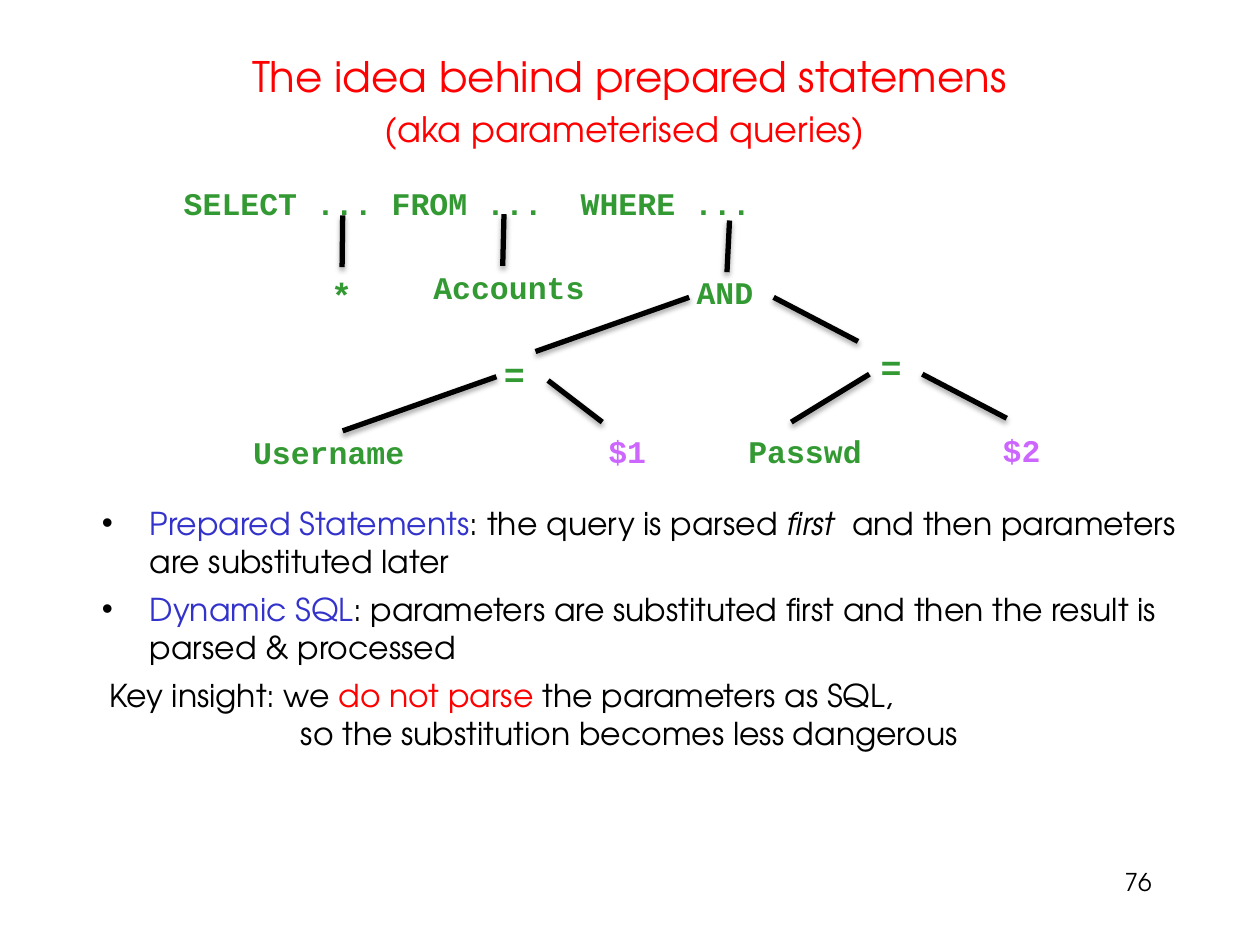
"""Build a slide that explains prepared statements with a query parse tree."""
from lxml.etree import SubElement
from pptx import Presentation
from pptx.dml.color import RGBColor
from pptx.enum.shapes import MSO_CONNECTOR
from pptx.enum.text import MSO_ANCHOR, MSO_AUTO_SIZE, PP_ALIGN
from pptx.oxml.ns import qn
from pptx.util import Inches, Pt

THEME = {
    "heading": "FF0000", "term": "3333CC", "body": "000000",
    "node": "339933", "parameter": "CC66FF",
    "title_size": 24, "subtitle_size": 20, "body_size": 18, "number_size": 14,
    "node_size": 18, "symbol_size": 20, "branch_width": 3,
    "text_font": "TeX Gyre Adventor", "code_font": "Courier New",
}

presentation = Presentation()
presentation.slide_width, presentation.slide_height = Inches(10), Inches(7.5)
slide = presentation.slides.add_slide(presentation.slide_layouts[6])
column = presentation.slide_width / 10
row = presentation.slide_height / 7.5


def add_box(left, top, width, height, **frame_format):
    box = slide.shapes.add_textbox(
        int(left * column), int(top * row), int(width * column), int(height * row))
    for name, value in {"word_wrap": True, **frame_format}.items():
        setattr(box.text_frame, name, value)
    return box


def add_run(paragraph, text, color, size, font="text_font", **font_format):
    run = paragraph.add_run()
    run.text = text
    run.font.color.rgb = RGBColor.from_string(THEME[color])
    values = {"name": THEME[font], "size": Pt(THEME[size]), **font_format}
    for name, value in values.items():
        setattr(run.font, name, value)


title = add_box(0.75, 0.3, 8.49, 0.92, vertical_anchor=MSO_ANCHOR.MIDDLE)
heading = title.text_frame.paragraphs[0]
heading.alignment, heading.line_spacing = PP_ALIGN.CENTER, 1.16
add_run(heading, "The idea behind prepared statemens", "heading", "title_size")
heading.add_line_break()
add_run(heading, "(aka parameterised queries) ", "heading", "subtitle_size")

explanation = [
    ("•", 0.38, 6, [("Prepared Statements", "term"), (": the query is parsed ", "body"),
                    ("first ", "body", True),
                    (" and then parameters are substituted later", "body")]),
    ("•", 0.38, 6, [("Dynamic SQL", "term"),
                    (": parameters are substituted first and then the result is "
                     "parsed & processed", "body")]),
    (None, 0.06, 6, [("Key insight: we", "body"), (" do not parse ", "heading"),
                     ("the parameters as SQL,", "body")]),
    (None, 1.58, 0, [("so the substitution becomes less dangerous", "body")]),
]
body = add_box(0.71, 3.95, 8.94, 2.36)
for index, (bullet, margin, space_before, runs) in enumerate(explanation):
    frame = body.text_frame
    paragraph = frame.add_paragraph() if index else frame.paragraphs[0]
    paragraph.space_before = Pt(space_before)
    properties = paragraph._p.get_or_add_pPr()
    properties.set("marL", str(Inches(margin)))
    properties.set("indent", str(-Inches(margin) if bullet else 0))
    if bullet:
        bullet_color = SubElement(properties, qn("a:buClr"))
        SubElement(bullet_color, qn("a:srgbClr"), val=THEME["body"])
        SubElement(properties, qn("a:buFont"), typeface="Arial")
        SubElement(properties, qn("a:buChar"), char=bullet)
    for text, color, *italic in runs:
        add_run(paragraph, text, color, "body_size", italic=bool(italic))

page_number = add_box(7.17, 6.83, 2.07, 0.49).text_frame.paragraphs[0]
page_number.alignment = PP_ALIGN.RIGHT
add_run(page_number, "76", "body", "number_size")

tree_nodes = [
    (" SELECT ... FROM ...  WHERE ...", 1.21, 1.41, 4.88, 0.36, "node", "node_size"),
    ("Accounts", 3.34, 2.08, 1.41, 0.36, "node", "node_size"),
    ("AND", 5.43, 2.12, 0.65, 0.36, "node", "node_size"),
    ("*", 2.53, 2.12, 0.37, 0.29, "node", "symbol_size"),
    ("=", 3.9, 2.75, 0.37, 0.39, "node", "symbol_size"),
    ("=", 6.89, 2.69, 0.37, 0.39, "node", "symbol_size"),
    ("Username", 1.91, 3.39, 1.41, 0.36, "node", "node_size"),
    ("Passwd", 5.84, 3.38, 1.11, 0.36, "node", "node_size"),
    ("$1", 4.73, 3.38, 0.5, 0.4, "parameter", "node_size"),
    ("$2", 7.86, 3.37, 0.5, 0.4, "parameter", "node_size"),
]
nodes = {}
for text, left, top, width, height, color, size in tree_nodes:
    nodes[text] = add_box(left, top, width, height, word_wrap=False,
                          auto_size=MSO_AUTO_SIZE.SHAPE_TO_FIT_TEXT)
    add_run(nodes[text].text_frame.paragraphs[0], text, color, size, "code_font", bold=True)

branches = [
    (2.72, 1.71, 2.71, 2.12, "*"),
    (4, 1.7, 3.99, 2.11),
    (5.79, 1.75, 5.77, 2.16),
    (5.47, 2.36, 4.25, 2.79),
    (6.14, 2.36, 6.81, 2.71),
    (3.94, 2.99, 2.72, 3.42),
    (4.35, 3.02, 4.78, 3.35),
    (6.9, 2.97, 6.28, 3.35),
    (7.32, 2.97, 7.99, 3.32),
]
for start_x, start_y, end_x, end_y, *joined_nodes in branches:
    branch = slide.shapes.add_connector(
        MSO_CONNECTOR.STRAIGHT, int(start_x * column), int(start_y * row),
        int(end_x * column), int(end_y * row))
    branch.line.width = Pt(THEME["branch_width"])
    branch.line.color.rgb = RGBColor.from_string(THEME["body"])
    for joined_node in joined_nodes:
        branch.end_connect(nodes[joined_node], 0)
    effects = SubElement(branch._element.spPr, qn("a:effectLst"))
    shadow = SubElement(effects, qn("a:outerShdw"), blurRad=str(Pt(3.1)),
                        dist=str(Pt(1.8)), dir="5400000", rotWithShape="0")
    shadow_color = SubElement(shadow, qn("a:srgbClr"), val=THEME["body"])
    SubElement(shadow_color, qn("a:alpha"), val="35000")

presentation.save("out.pptx")
